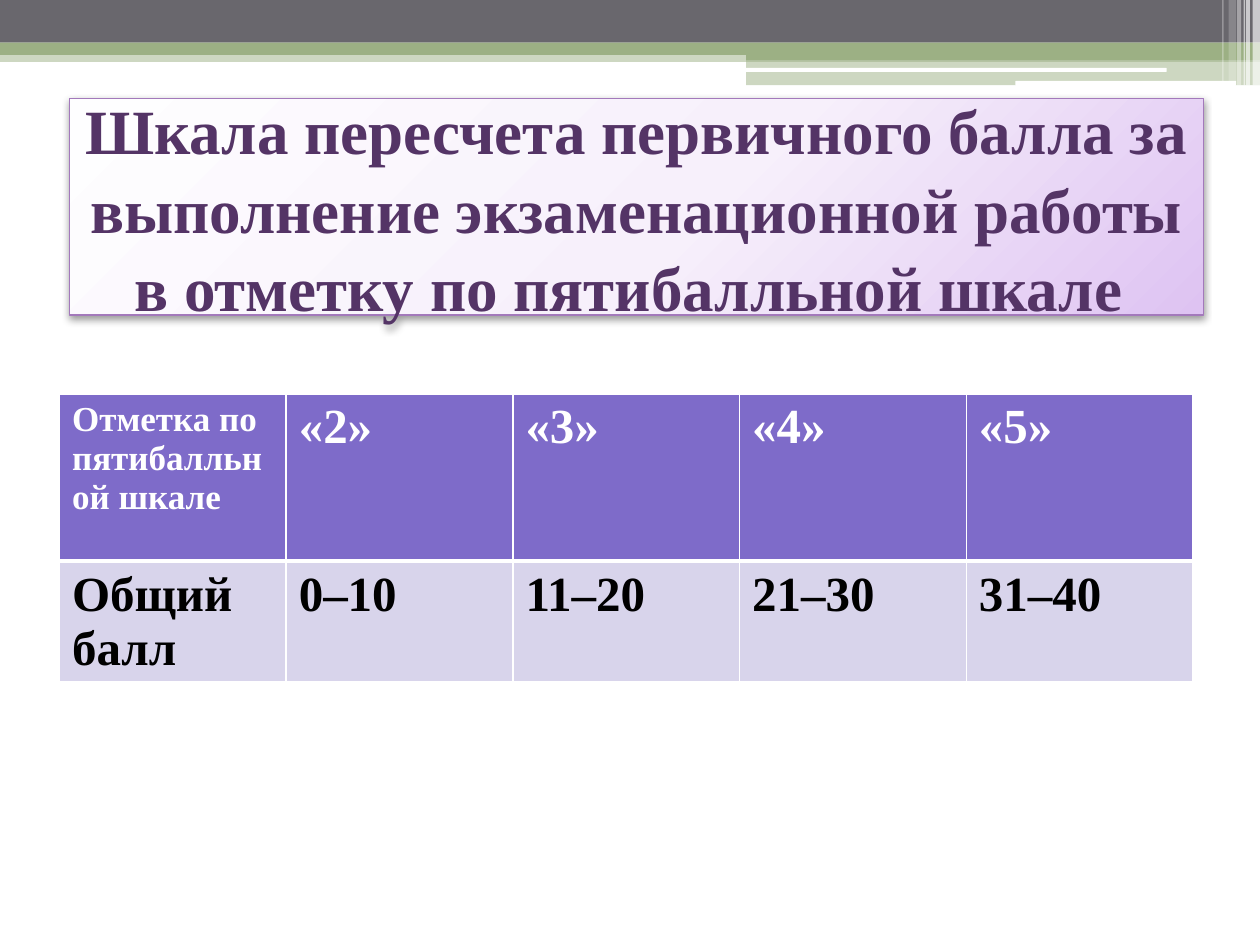
from dataclasses import dataclass
from lxml.etree import SubElement as Sub
from pptx import Presentation
from pptx.dml.color import RGBColor as Rgb
from pptx.enum.shapes import MSO_SHAPE as Kind
from pptx.enum.text import MSO_ANCHOR as Anchor, PP_ALIGN as Align
from pptx.oxml.ns import qn
from pptx.util import Cm, Pt


@dataclass(frozen=True)
class Theme:
    font: str = "Times New Roman"
    white: str = "FFFFFF"
    black: str = "000000"
    gray: str = "69676D"
    green: str = "9CB084"
    plum: str = "543466"
    edge: str = "A379BB"
    head: str = "7E6BC9"
    body: str = "D8D4EB"
    glow: tuple = ((0, "FEFEFF"), (55, "F7F0FB"), (100, "DEC3F2"))
    title: int = 36
    cell: int = 28
    small: int = 20


T = Theme()

BANDS = [
    (0, 1.02, 25.4, 0.23, T.green, 50),
    (0, 0, 25.4, 0.86, T.gray, 100),
    (0, 0.86, 25.4, 0.25, T.green, 100),
    (15.04, 0.99, 10.36, 0.23, T.green, 100),
    (15.04, 1.22, 10.36, 0.5, T.green, 50),
]
BARS = [(15.01, 1.37, 8.51, 0.08), (20.47, 1.63, 4.45, 0.1)]
STRIPES = [
    (25.25, 0.15, 1.73, 65),
    (25.12, 0.08, 1.73, 65),
    (25.07, 0.03, 1.73, 60),
    (24.94, 0.08, 1.73, 40),
    (24.77, 0.15, 1.63, 20),
    (24.64, 0.03, 1.63, 30),
]
TITLE = ("Шкала пересчета первичного балла за выполнение "
         "экзаменационной работы в отметку по пятибалльной шкале ")
ROWS = [
    ["Отметка по пятибалльной шкале", "«2»", "«3»", "«4»", "«5»"],
    ["Общий балл", "0–10", "11–20", "21–30", "31–40"],
]


def tint(node, color, alpha=100):
    clr = Sub(node, qn("a:srgbClr"), val=color)
    if alpha < 100:
        Sub(clr, qn("a:alpha"), val=str(alpha * 1000))


def block(slide, x, y, w, h, color, alpha=100, kind=Kind.RECTANGLE):
    shape = slide.shapes.add_shape(kind, Cm(x), Cm(y), Cm(w), Cm(h))
    shape.shadow.inherit = False
    shape.line.fill.background()
    shape.fill.solid()
    fill = shape._element.spPr.find(qn("a:solidFill"))
    tint(fill, color, alpha)
    return shape


def style(par, size, color):
    for run in par.runs:
        font = run.font
        font.name, font.size, font.bold = T.font, Pt(size), True
        font.color.rgb = Rgb.from_string(color)


def blend(shape):
    props = shape._element.spPr
    old = props.find(qn("a:solidFill"))
    grad = Sub(props, qn("a:gradFill"), rotWithShape="1")
    props.replace(old, grad)
    stops = Sub(grad, qn("a:gsLst"))
    for pos, color in T.glow:
        tint(Sub(stops, qn("a:gs"), pos=str(pos * 1000)), color)
    way = Sub(grad, qn("a:path"), {"path": "circle"})
    Sub(way, qn("a:fillToRect"), l="-40000", t="-90000", r="140000", b="190000")


def shade(shape):
    effects = shape._element.spPr.find(qn("a:effectLst"))
    drop = Sub(effects, qn("a:outerShdw"), blurRad=str(Pt(4.1)),
               dist=str(Pt(2)), dir="5400000", rotWithShape="0")
    tint(drop, T.black, 40)


def header(slide):
    box = block(slide, 1.4, 1.98, 22.86, 4.37, T.white)
    box.line.color.rgb = Rgb.from_string(T.edge)
    box.line.width = Pt(0.75)
    blend(box)
    shade(box)
    frame = box.text_frame
    frame.text = TITLE
    frame.word_wrap = True
    frame.vertical_anchor = Anchor.MIDDLE
    par = frame.paragraphs[0]
    par.alignment = Align.CENTER
    par.line_spacing = 1.04
    style(par, T.title, T.plum)


def border(cell, base):
    props = cell._tc.get_or_add_tcPr()
    for side, width in (("L", 1), ("R", 1), ("T", 1), ("B", base)):
        line = Sub(props, qn("a:ln" + side), w=str(Pt(width)))
        tint(Sub(line, qn("a:solidFill")), T.white)


def scale(slide):
    wide, highs = 4.57, (3.37, 2.42)
    frame = slide.shapes.add_table(
        len(ROWS), len(ROWS[0]), Cm(1.2), Cm(7.94),
        Cm(wide * len(ROWS[0])), Cm(sum(highs)))
    table = frame.table
    for col in table.columns:
        col.width = Cm(wide)
    looks = ((T.head, T.white, 3), (T.body, T.black, 1))
    for r, (texts, high, look) in enumerate(zip(ROWS, highs, looks)):
        table.rows[r].height = Cm(high)
        fill, ink, base = look
        for c, text in enumerate(texts):
            cell = table.cell(r, c)
            cell.text_frame.text = text
            size = T.small if r == c == 0 else T.cell
            style(cell.text_frame.paragraphs[0], size, ink)
            border(cell, 1 if r else base)
            cell.fill.solid()
            cell.fill.fore_color.rgb = Rgb.from_string(fill)


def main():
    deck = Presentation()
    deck.slide_width, deck.slide_height = Cm(25.4), Cm(19.05)
    slide = deck.slides.add_slide(deck.slide_layouts[6])
    for band in BANDS:
        block(slide, *band)
    for bar in BARS:
        block(slide, *bar, T.white, kind=Kind.ROUNDED_RECTANGLE)
    for x, w, h, alpha in STRIPES:
        block(slide, x, 0, w, h, T.white, alpha)
    header(slide)
    scale(slide)
    deck.save("out.pptx")


if __name__ == "__main__":
    main()
